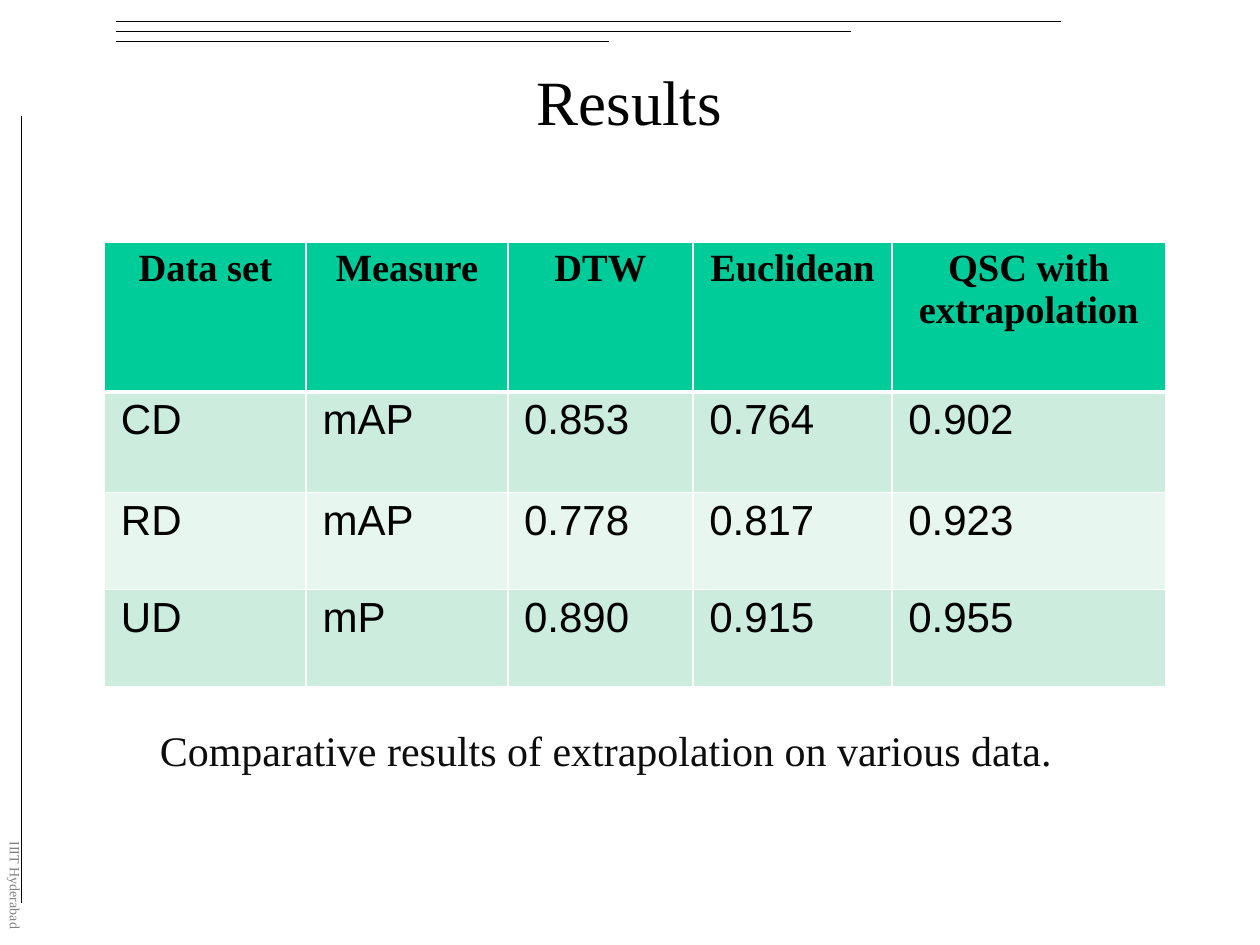
from lxml.etree import SubElement
from pptx import Presentation
from pptx.dml.color import RGBColor
from pptx.enum.shapes import MSO_CONNECTOR
from pptx.enum.text import MSO_ANCHOR, PP_ALIGN
from pptx.oxml.ns import qn
from pptx.util import Inches, Pt

BLACK = RGBColor(0x00, 0x00, 0x00)
WHITE = RGBColor(0xFF, 0xFF, 0xFF)
GREY = RGBColor(0x80, 0x80, 0x80)
NEAR_BLACK = RGBColor(0x0D, 0x0D, 0x0D)
GREEN = RGBColor(0x00, 0xCC, 0x99)
BANDS = [RGBColor(0xCC, 0xEC, 0xDE), RGBColor(0xE7, 0xF6, 0xEF)]
SERIF, SANS = "Times New Roman", "Arial"

WIDTH, HEIGHT = 10, 7.5
COLUMNS = [1.6, 1.6, 1.47, 1.58, 2.17]
ROWS = [1.19, 0.8, 0.77, 0.77]
RESULTS = [
    ["Data set", "Measure", "DTW", "Euclidean", "QSC with extrapolation"],
    ["CD", "mAP", "0.853", "0.764", "0.902"],
    ["RD", "mAP", "0.778", "0.817", "0.923"],
    ["UD", "mP", "0.890", "0.915", "0.955"],
]


def write(tf, text, size, font=SERIF, color=BLACK, bold=False, align=PP_ALIGN.LEFT):
    tf.word_wrap = True
    p = tf.paragraphs[0]
    p.alignment = align
    r = p.add_run()
    r.text = text
    r.font.size, r.font.name, r.font.bold = Pt(size), font, bold
    r.font.color.rgb = color


def add_text(s, box, text, size, anchor=MSO_ANCHOR.TOP, vertical=False, **fmt):
    tf = s.shapes.add_textbox(*map(Inches, box)).text_frame
    tf.vertical_anchor = anchor
    write(tf, text, size, **fmt)
    if vertical:
        tf._txBody.bodyPr.set("vert", "eaVert")


def add_rule(s, x1, y1, x2, y2):
    ends = map(Inches, (x1, y1, x2, y2))
    line = s.shapes.add_connector(MSO_CONNECTOR.STRAIGHT, *ends)
    line.line.color.rgb = BLACK
    line.line.width = Pt(0.75)
    SubElement(line._element.spPr, qn("a:effectLst"))


def add_frame(s, width, height):
    """Three shortening rules along the top, one down the left, and a side label."""
    margin, gap = 0.92, 0.08
    for i, end in enumerate([8.42, 6.75, 4.83]):
        y = 0.17 + i * gap
        add_rule(s, margin, y, end, y)
    add_rule(s, 0.17, margin, 0.17, height - 0.33)
    add_text(s, (-0.09, height - margin, 0.33, margin), "IIIT Hyderabad", 8,
             color=GREY, vertical=True)


def set_borders(cell, bottom):
    tcPr = cell._tc.get_or_add_tcPr()
    for i, (side, width) in enumerate(zip("LRTB", (1, 1, 1, bottom))):
        # Borders come before the fill in the cell properties
        ln = SubElement(tcPr, qn(f"a:ln{side}"), w=str(Pt(width)))
        tcPr.insert(i, ln)
        SubElement(SubElement(ln, qn("a:solidFill")), qn("a:srgbClr"), val=str(WHITE))


def add_results(s, left, top):
    box = map(Inches, (left, top, sum(COLUMNS), sum(ROWS)))
    table = s.shapes.add_table(len(ROWS), len(COLUMNS), *box).table
    for column, width in zip(table.columns, COLUMNS):
        column.width = Inches(width)
    for i, (row, height) in enumerate(zip(table.rows, ROWS)):
        row.height = Inches(height)
        header = i == 0
        for cell, text in zip(row.cells, RESULTS[i]):
            cell.margin_left = cell.margin_right = Inches(0.13)
            cell.margin_top = cell.margin_bottom = Inches(0.04)
            cell.fill.solid()
            cell.fill.fore_color.rgb = GREEN if header else BANDS[(i - 1) % 2]
            set_borders(cell, 3 if header else 1)
            if header:
                write(cell.text_frame, text, 22, bold=True, align=PP_ALIGN.CENTER)
            else:
                write(cell.text_frame, text, 24, font=SANS)


def main():
    prs = Presentation()
    prs.slide_width, prs.slide_height = Inches(WIDTH), Inches(HEIGHT)
    s = prs.slides.add_slide(prs.slide_layouts[6])
    add_frame(s, WIDTH, HEIGHT)
    # Title
    add_text(s, (0.75, 0.18, 8.49, 1.24), "Results", 36,
             anchor=MSO_ANCHOR.MIDDLE, align=PP_ALIGN.CENTER)
    # Table and its caption
    add_results(s, 0.83, 1.92)
    add_text(s, (1.17, 5.7, 8.08, 0.5),
             "Comparative results of extrapolation on various data.", 24,
             color=NEAR_BLACK)
    prs.save("out.pptx")


if __name__ == "__main__":
    main()
